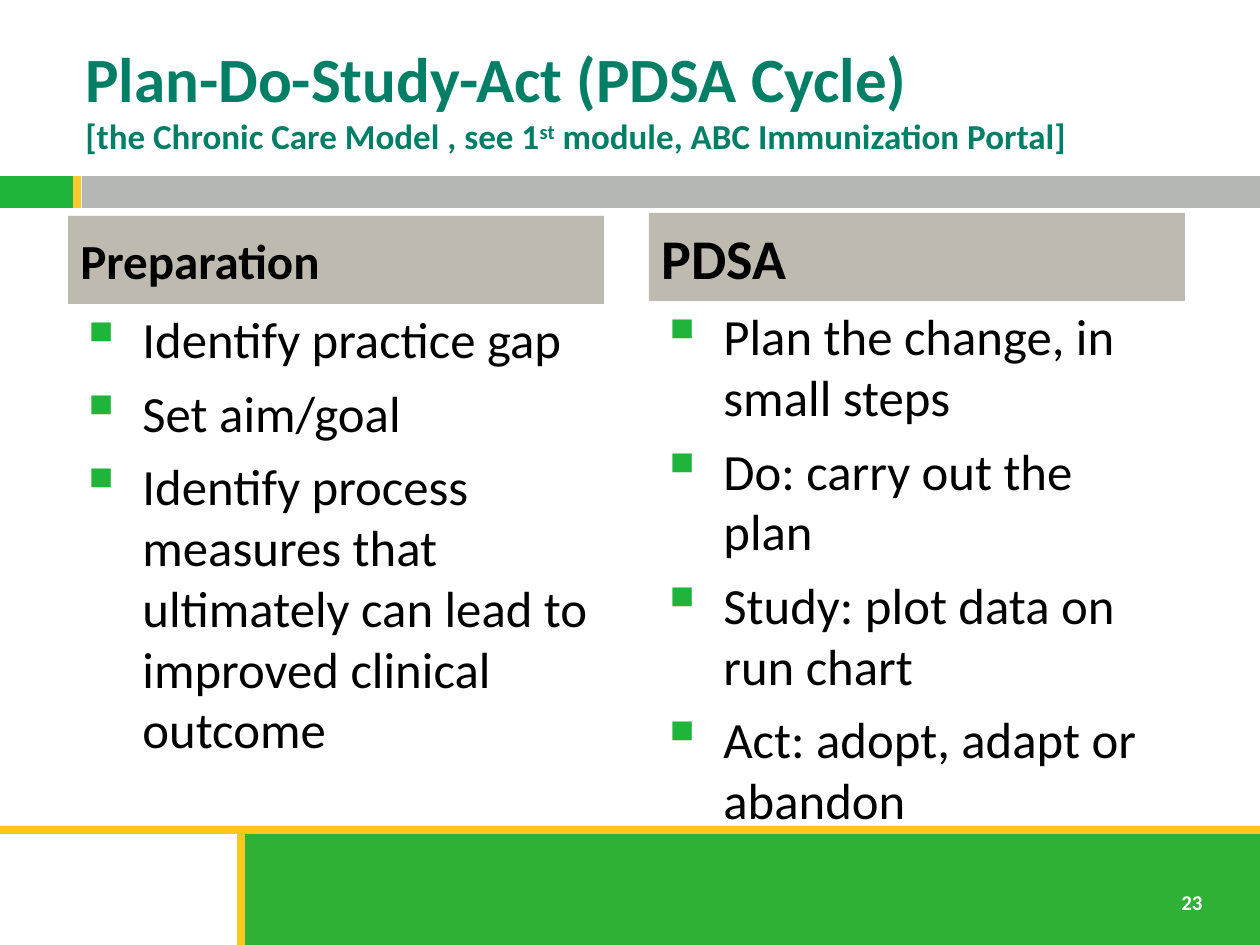
from lxml.etree import SubElement
from pptx import Presentation
from pptx.dml.color import RGBColor as Rgb
from pptx.enum.shapes import MSO_CONNECTOR as Conn, MSO_SHAPE as Kind
from pptx.enum.text import MSO_ANCHOR as Anchor
from pptx.oxml.ns import qn
from pptx.util import Pt

theme = {
    "face": "Calibri", "green": "1EB53A", "foot": "2EB135", "gray": "B5B7B4",
    "gold": "FFC61E", "amber": "FFC82E", "teal": "007E66", "tan": "BFBAAF",
    "ink": "000000", "white": "FFFFFF",
    "title": 36, "sub": 20, "body": 29, "page": 12, "gap": 7, "rule": 4.5,
}
SCALE = 914400 / 126


def px(*nums):
    return [round(n * SCALE) for n in nums]


def write(box, lines, size, tint, bold=False, mark=False, mid=False):
    frame = slide.shapes.add_textbox(*px(*box)).text_frame
    frame.word_wrap = True
    frame.vertical_anchor = Anchor.MIDDLE if mid else Anchor.TOP
    for i, line in enumerate(lines):
        para = frame.paragraphs[0] if i == 0 else frame.add_paragraph()
        para.text = line
        if i:
            para.space_before = Pt(theme["gap"])
        if mark:
            props = para._p.get_or_add_pPr()
            props.set("marL", "457200")
            props.set("indent", "-457200")
            hue = SubElement(props, qn("a:buClr"))
            SubElement(hue, qn("a:srgbClr"), val=theme["green"])
            SubElement(props, qn("a:buSzPct"), val="115000")
            SubElement(props, qn("a:buChar"), char="▪")
        font = para.font
        font.name, font.size, font.bold = theme["face"], Pt(size), bold
        font.color.rgb = Rgb.from_string(theme[tint])
    return frame


deck = Presentation()
deck.slide_width, deck.slide_height = px(1260, 945)
slide = deck.slides.add_slide(deck.slide_layouts[6])

for box, tint in [
    ((0, 176, 73, 32), "green"),
    ((82, 176, 1178, 32), "gray"),
    ((241, 830, 1019, 115), "foot"),
]:
    bar = slide.shapes.add_shape(Kind.RECTANGLE, *px(*box))
    bar.shadow.inherit = False
    bar.fill.solid()
    bar.fill.fore_color.rgb = Rgb.from_string(theme[tint])
    bar.line.fill.background()

for ends, tint in [
    ((0, 830, 1260, 830), "gold"),
    ((241, 830, 241, 945), "gold"),
    ((77, 176, 77, 208), "amber"),
]:
    rule = slide.shapes.add_connector(Conn.STRAIGHT, *px(*ends))
    rule.line.width = Pt(theme["rule"])
    rule.line.color.rgb = Rgb.from_string(theme[tint])
    SubElement(rule._element.spPr, qn("a:effectLst"))

page = write((1169, 883, 50, 38), ["23"], theme["page"], "white", bold=True)
page.word_wrap = False

head = write((73, 38, 1124, 120), ["Plan-Do-Study-Act (PDSA Cycle)"],
             theme["sub"], "teal", bold=True, mid=True).paragraphs[0]
head.runs[0].font.size = Pt(theme["title"])
head.add_line_break()
for text, base in [
    ("[the Chronic Care Model , see 1", 0),
    ("st", 30000),
    (" module, ABC Immunization Portal]", 0),
]:
    run = head.add_run()
    run.text = text
    if base:
        run.font._element.set("baseline", str(base))

for left, top, name, size, items in [
    (68, 216, "Preparation", 28, [
        "Identify practice gap",
        "Set aim/goal",
        "Identify process measures that ultimately can lead to improved clinical outcome",
    ]),
    (649, 213, "PDSA", 32, [
        "Plan the change, in small steps",
        "Do: carry out the plan",
        "Study: plot data on run chart",
        "Act: adopt, adapt or abandon",
    ]),
]:
    write((left - 1, top + 86, 536, 458), items, theme["body"], "ink", mark=True)
    label = write((left, top, 536, 88), [name], size, "ink", bold=True, mid=True)
    fill = label._parent.fill
    fill.solid()
    fill.fore_color.rgb = Rgb.from_string(theme["tan"])

deck.save("out.pptx")
